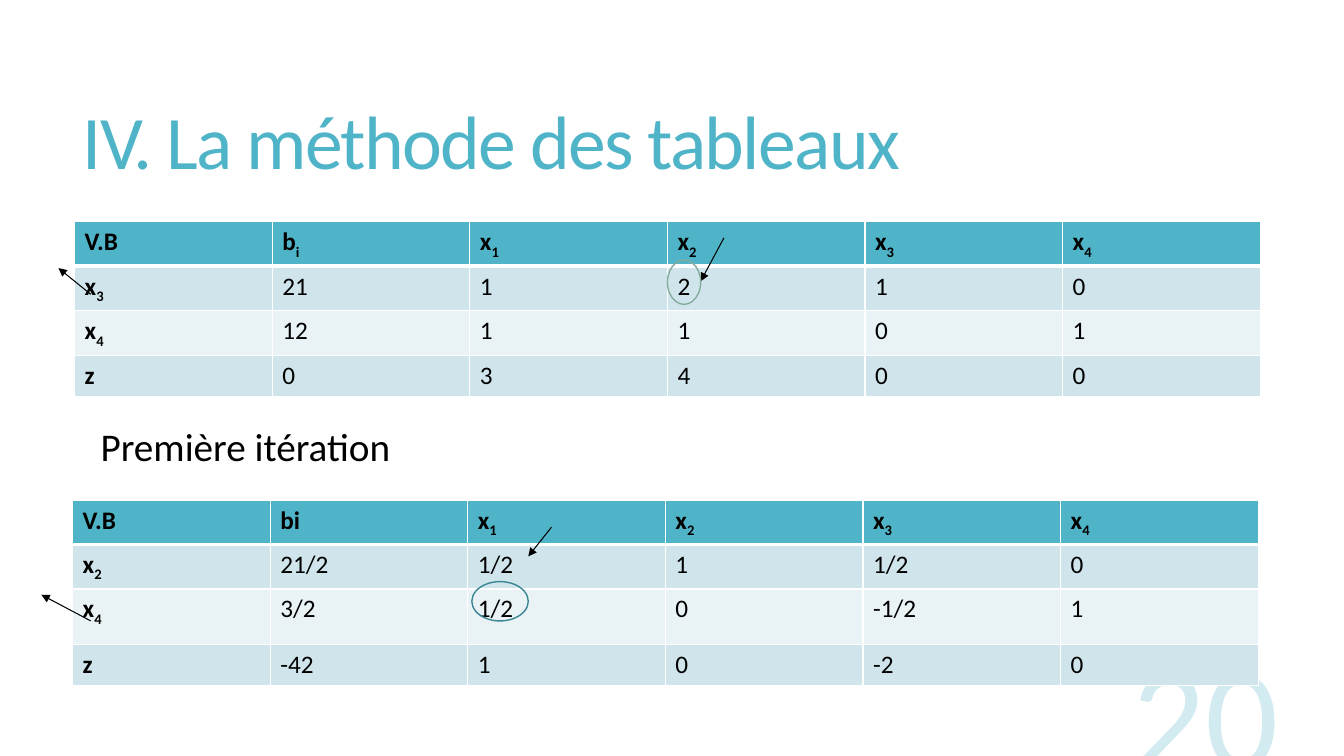
from lxml import etree
from pptx import Presentation, util as u
from pptx.dml.color import RGBColor
from pptx.enum import shapes, text
from pptx.oxml.ns import qn

PX = 9144  # 100 px to the inch
FONT = "Calibri"
COLORS = {
    "accent": "50B4C8", "ink": "000000", "grid": "FFFFFF",
    "band_dark": "D0E5EB", "band_light": "E9F2F5",
    "green_ring": "84AC9D", "teal_ring": "3B8594",
}


def write(frame, content, size, color="ink", bold=False):
    """Fill the frame with one paragraph; an underscore starts a subscript."""
    paragraph = frame.paragraphs[0]
    paragraph.font.name, paragraph.font.size = FONT, u.Pt(size)
    paragraph.font.bold = bold
    paragraph.font.color.rgb = RGBColor.from_string(COLORS[color])
    base, _, subscript = content.partition("_")
    paragraph.add_run().text = base
    if subscript:
        run = paragraph.add_run()
        run.text = subscript
        run._r.get_or_add_rPr().set("baseline", "-25000")
    return paragraph


def set_borders(cell, top, bottom):
    """Draw the white grid lines; top and bottom are widths in points."""
    properties = cell._tc.get_or_add_tcPr()
    sides = (("lnL", 1), ("lnR", 1), ("lnT", top), ("lnB", bottom))
    for index, (side, width) in enumerate(sides):
        line = etree.Element(qn(f"a:{side}"), w=str(u.Pt(width)))
        fill = etree.SubElement(line, qn("a:solidFill"))
        etree.SubElement(fill, qn("a:srgbClr"), val=COLORS["grid"])
        properties.insert(index, line)


prs = Presentation()
prs.slide_width, prs.slide_height = 1333 * PX, 750 * PX
slide = prs.slides.add_slide(prs.slide_layouts[5])

# Title
title = slide.shapes.title
title.left, title.top, title.width, title.height = (v * PX for v in (72, 55, 1178, 181))
title.text_frame.vertical_anchor = text.MSO_ANCHOR.MIDDLE
title.text_frame.auto_size = text.MSO_AUTO_SIZE.NONE
heading = write(title.text_frame, "IV. La méthode des tableaux", 54, "accent")
heading.alignment = text.PP_ALIGN.LEFT
heading.line_spacing = 0.85
heading.runs[0]._r.get_or_add_rPr().set("spc", "-120")

# Page number, behind the second table
number_box = slide.shapes.add_textbox(*(v * PX for v in (958, 643, 320, 153)))
number_box.text_frame.word_wrap = True
number_box.text_frame.vertical_anchor = text.MSO_ANCHOR.BOTTOM
number = write(number_box.text_frame, "20", 103, "accent")
number.alignment = text.PP_ALIGN.RIGHT
number_font = number.runs[0].font
number_font.color.rgb = RGBColor.from_string(COLORS["accent"])
number_color = number_font.fill._xPr.find(f".//{qn('a:srgbClr')}")
etree.SubElement(number_color, qn("a:alpha"), val="25000")

# Simplex tables: left, top, row heights, rows
tableaux = [
    (74, 220, (41, 41, 41, 41), [
        "V.B b_i x_1 x_2 x_3 x_4",
        "x_3 21 1 2 1 0",
        "x_4 12 1 1 0 1",
        "z 0 3 4 0 0",
    ]),
    (72, 496, (41, 41, 55, 41), [
        "V.B bi x_1 x_2 x_3 x_4",
        "x_2 21/2 1/2 1 1/2 0",
        "x_4 3/2 1/2 0 -1/2 1",
        "z -42 1 0 -2 0",
    ]),
]
for left, top, heights, rows in tableaux:
    tableau = slide.shapes.add_table(
        4, 6, left * PX, top * PX, 1176 * PX, sum(heights) * PX).table
    for column in tableau.columns:
        column.width = 196 * PX
    for r, (height, row) in enumerate(zip(heights, rows)):
        tableau.rows[r].height = height * PX
        band = "accent" if r == 0 else "band_dark" if r % 2 else "band_light"
        for c, value in enumerate(row.split()):
            cell = tableau.cell(r, c)
            cell.fill.solid()
            cell.fill.fore_color.rgb = RGBColor.from_string(COLORS[band])
            set_borders(cell, 3 if r == 1 else 1, 3 if r == 0 else 1)
            write(cell.text_frame, value, 18, bold=r == 0 or c == 0)

# Caption of the second table
caption = slide.shapes.add_textbox(*(v * PX for v in (90, 419, 526, 47)))
caption.text_frame.word_wrap = True
caption.text_frame.vertical_anchor = text.MSO_ANCHOR.MIDDLE
write(caption.text_frame, "Première itération", 28)

# Arrows to the entering and leaving variables
for ends in [(718, 236, 695, 279), (90, 292, 58, 266),
             (547, 523, 524, 552), (90, 616, 41, 590)]:
    arrow = slide.shapes.add_connector(
        shapes.MSO_CONNECTOR.STRAIGHT, *(v * PX for v in ends))
    arrow.line.width = u.Pt(0.75)
    arrow.line.color.rgb = RGBColor.from_string(COLORS["ink"])
    etree.SubElement(arrow.line._get_or_add_ln(), qn("a:tailEnd"), type="triangle")
    etree.SubElement(arrow._element.spPr, qn("a:effectLst"))

# Rings around the pivots
for bounds, color in [((662, 258, 33, 44), "green_ring"),
                      ((468, 577, 56, 39), "teal_ring")]:
    ring = slide.shapes.add_shape(
        shapes.MSO_SHAPE.OVAL, *(v * PX for v in bounds))
    ring.shadow.inherit = False
    ring.fill.background()
    ring.line.width = u.Pt(1)
    ring.line.color.rgb = RGBColor.from_string(COLORS[color])

prs.save("out.pptx")
